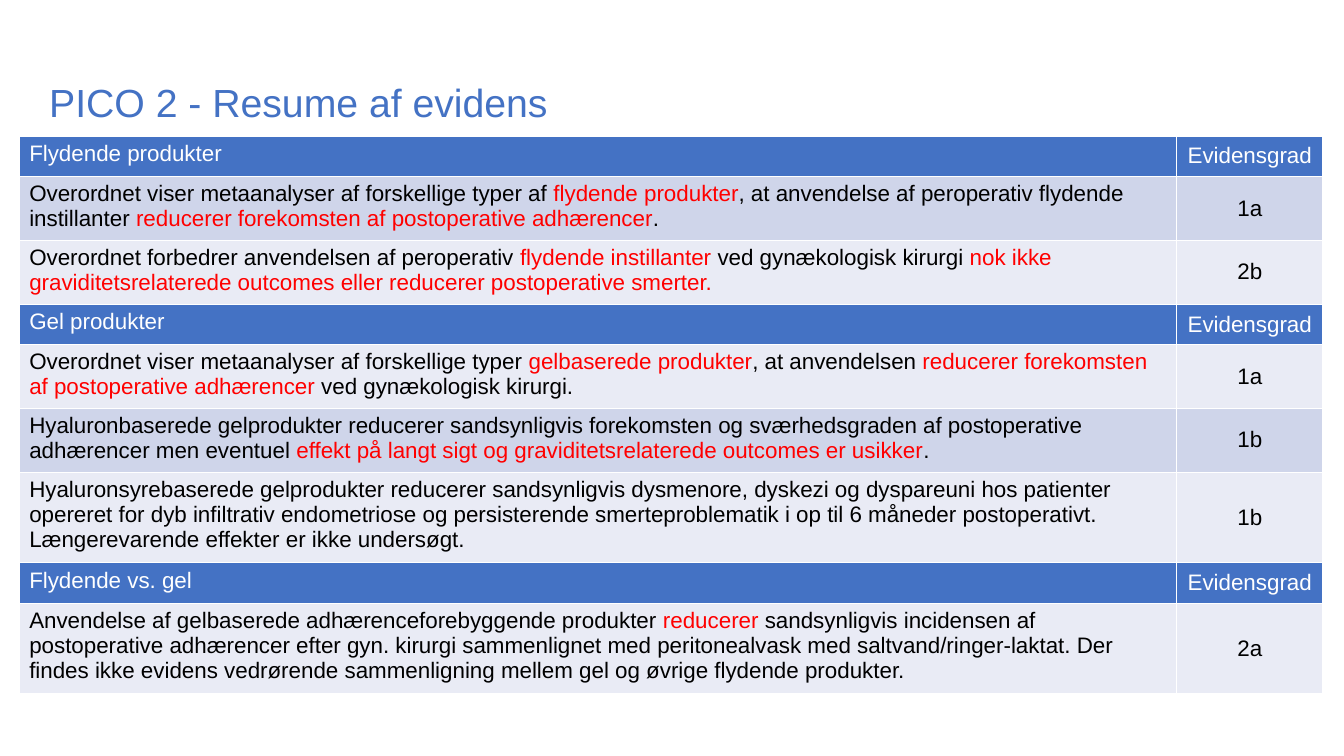
from pptx import Presentation
from pptx.dml.color import RGBColor
from pptx.enum.text import MSO_ANCHOR, PP_ALIGN
from pptx.util import Inches, Pt

BLUE = RGBColor(0x44, 0x72, 0xC4)
BAND_DARK = RGBColor(0xCF, 0xD5, 0xEA)
BAND_LIGHT = RGBColor(0xE9, 0xEB, 0xF5)
WHITE = RGBColor(0xFF, 0xFF, 0xFF)
BLACK = RGBColor(0, 0, 0)
RED = RGBColor(0xFF, 0, 0)

HEADING = "Evidensgrad"
HEADING_HEIGHT, LINE_HEIGHT, ROW_PADDING = 0.4, 0.25, 0.1
GRADE_WIDTH, STATEMENT_WIDTH = 1.45, 11.48

# Statement, grade, lines of text; passages between bars are red
evidence = [
    ("Flydende produkter", HEADING, 1),
    ("Overordnet viser metaanalyser af forskellige typer af |flydende produkter|, "
     "at anvendelse af peroperativ flydende instillanter "
     "|reducerer forekomsten af postoperative adhærencer|.", "1a", 2),
    ("Overordnet forbedrer anvendelsen af peroperativ |flydende instillanter |"
     "ved gynækologisk kirurgi |nok ikke graviditetsrelaterede outcomes "
     "eller reducerer postoperative smerter.", "2b", 2),
    ("Gel produkter", HEADING, 1),
    ("Overordnet viser metaanalyser af forskellige typer |gelbaserede produkter|, "
     "at anvendelsen |reducerer forekomsten af postoperative adhærencer |"
     "ved gynækologisk kirurgi.", "1a", 2),
    ("Hyaluronbaserede gelprodukter reducerer sandsynligvis forekomsten og "
     "sværhedsgraden af postoperative adhærencer men eventuel |effekt på langt sigt "
     "og graviditetsrelaterede outcomes er usikker|.", "1b", 2),
    ("Hyaluronsyrebaserede gelprodukter reducerer sandsynligvis dysmenore, dyskezi "
     "og dyspareuni hos patienter opereret for dyb infiltrativ endometriose og "
     "persisterende smerteproblematik i op til 6 måneder postoperativt. "
     "Længerevarende effekter er ikke undersøgt.", "1b", 3),
    ("Flydende vs. gel", HEADING, 1),
    ("Anvendelse af gelbaserede adhærenceforebyggende produkter |reducerer |"
     "sandsynligvis incidensen af postoperative adhærencer efter gyn. kirurgi "
     "sammenlignet med peritonealvask med saltvand/ringer-laktat. Der findes ikke "
     "evidens vedrørende sammenligning mellem gel og øvrige flydende produkter.",
     "2a", 3),
]

prs = Presentation()
prs.slide_width, prs.slide_height = Inches(13.33), Inches(7.5)
slide = prs.slides.add_slide(prs.slide_layouts[6])

# Title
title = slide.shapes.add_textbox(Inches(0.39), Inches(0.7), Inches(11.5), Inches(0.62))
title.text_frame.word_wrap = True
title.text_frame.vertical_anchor = MSO_ANCHOR.MIDDLE
title_line = title.text_frame.paragraphs[0]
title_line.text = "PICO 2 - Resume af evidens"
title_line.font.name, title_line.font.size = "Arial", Pt(28)
title_line.font.color.rgb = BLUE

# Evidence table
heights = [HEADING_HEIGHT if grade == HEADING else ROW_PADDING + LINE_HEIGHT * lines
           for _, grade, lines in evidence]
table = slide.shapes.add_table(
    len(evidence), 2, Inches(0.19), Inches(1.35),
    Inches(STATEMENT_WIDTH + GRADE_WIDTH), Inches(sum(heights))).table
table.columns[0].width = Inches(STATEMENT_WIDTH)
table.columns[1].width = Inches(GRADE_WIDTH)

for row, (statement, grade, _) in enumerate(evidence):
    table.rows[row].height = Inches(heights[row])
    is_heading = grade == HEADING
    band = BLUE if is_heading else BAND_DARK if row % 2 else BAND_LIGHT
    for column, content in enumerate((statement, grade)):
        cell = table.cell(row, column)
        cell.fill.solid()
        cell.fill.fore_color.rgb = band
        paragraph = cell.text_frame.paragraphs[0]
        paragraph.font.name, paragraph.font.size = "Arial", Pt(16)
        paragraph.font.bold = False
        if column == 1:
            cell.vertical_anchor = MSO_ANCHOR.MIDDLE
            paragraph.alignment = PP_ALIGN.CENTER
        for part, passage in enumerate(content.split("|")):
            run = paragraph.add_run()
            run.text = passage
            run.font.color.rgb = WHITE if is_heading else RED if part % 2 else BLACK

prs.save("out.pptx")
